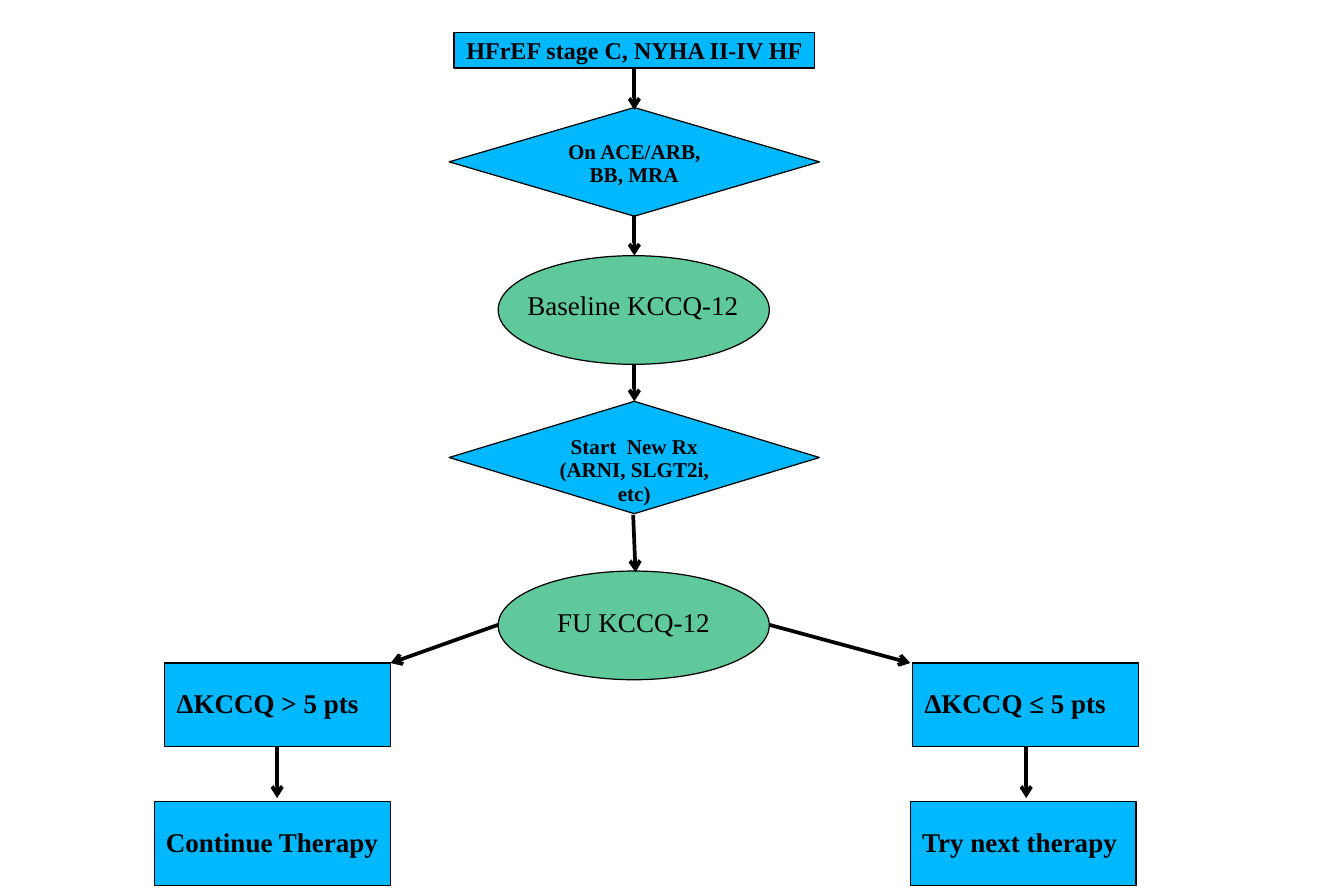
from lxml import etree
from pptx import Presentation
from pptx import util as u
from pptx.dml.color import RGBColor
from pptx.enum import shapes, text
from pptx.oxml import ns

BLUE, GREEN, BLACK = "00B8FF", "60C99C", "000000"
CENTER_X = 5.31


def color(hex_string):
    """Turn a hex string into a colour."""
    return RGBColor.from_string(hex_string)


def write(shape, wording, size=16.3, bold=True, align=text.PP_ALIGN.LEFT,
          anchor=text.MSO_ANCHOR.TOP, left=0.1, right=0.05):
    """Write one formatted paragraph into a shape."""
    frame = shape.text_frame
    frame.word_wrap = True
    frame.vertical_anchor = anchor
    frame.margin_left, frame.margin_right = u.Inches(left), u.Inches(right)
    frame.margin_top = frame.margin_bottom = u.Inches(0.05)
    paragraph = frame.paragraphs[0]
    paragraph.alignment = align
    paragraph.line_spacing = 0.93
    run = paragraph.add_run()
    run.text = wording
    run.font.name = "Times New Roman"
    run.font.size = u.Pt(size)
    run.font.bold = bold
    run.font.color.rgb = color(BLACK)


def add_node(slide, kind, box, fill):
    """Add an outlined preset shape in the given box."""
    shape = slide.shapes.add_shape(kind, *map(u.Inches, box))
    shape.shadow.inherit = False
    shape.fill.solid()
    shape.fill.fore_color.rgb = color(fill)
    shape.line.color.rgb = color(BLACK)
    shape.line.width = u.Pt(0.75)
    return shape


def add_arrow(slide, start, end):
    """Add an arrow between two points."""
    arrow = slide.shapes.add_connector(
        shapes.MSO_CONNECTOR.STRAIGHT, *map(u.Inches, (*start, *end)))
    arrow.line.color.rgb = color(BLACK)
    arrow.line.width = u.Pt(2.25)
    etree.SubElement(arrow.line._get_or_add_ln(), ns.qn("a:tailEnd"), type="arrow")
    etree.SubElement(arrow._element.spPr, ns.qn("a:effectLst"))


def add_header(slide, box, wording):
    """Add the patient group at the top of the flow."""
    header = add_node(slide, shapes.MSO_SHAPE.RECTANGLE, box, BLUE)
    write(header, wording, size=14.5, align=text.PP_ALIGN.CENTER, left=0.05)


def add_decision(slide, box, wording):
    """Add a treatment diamond."""
    diamond = add_node(slide, shapes.MSO_SHAPE.FLOWCHART_DECISION, box, BLUE)
    write(diamond, wording, size=12.7, align=text.PP_ALIGN.CENTER, left=0.12, right=0.12)


def add_survey(slide, box, wording, label_width, label_offset):
    """Add a survey ellipse with its label centred across it."""
    left, top, width, height = box
    add_node(slide, shapes.MSO_SHAPE.OVAL, box, GREEN)
    label = slide.shapes.add_textbox(
        u.Inches(left + (width - label_width) / 2), u.Inches(top + label_offset),
        u.Inches(label_width), u.Inches(0.36))
    write(label, wording, bold=False)


def add_branch(slide, result_box, action_box, arrow_x, result, action):
    """Add a survey result, the action it leads to and the arrow between."""
    for box, wording in ((result_box, result), (action_box, action)):
        shape = add_node(slide, shapes.MSO_SHAPE.RECTANGLE, box, BLUE)
        write(shape, wording, anchor=text.MSO_ANCHOR.MIDDLE)
    bottom = result_box[1] + result_box[3]
    add_arrow(slide, (arrow_x, bottom), (arrow_x, action_box[1] - 0.03))


def main():
    """Build the therapy flowchart."""
    presentation = Presentation()
    presentation.slide_width = u.Inches(11.25)
    presentation.slide_height = u.Inches(7.5)
    slide = presentation.slides.add_slide(presentation.slide_layouts[6])

    add_header(slide, (3.8, 0.27, 3.02, 0.3), "HFrEF stage C, NYHA II-IV HF")
    add_decision(slide, (3.76, 0.9, 3.1, 0.91), "On ACE/ARB, BB, MRA")
    add_survey(slide, (4.17, 2.14, 2.27, 0.91), "Baseline KCCQ-12", 1.98, 0.25)
    add_decision(slide, (3.76, 3.36, 3.1, 0.94), "Start  New Rx (ARNI, SLGT2i, etc)")
    add_survey(slide, (4.17, 4.78, 2.27, 0.91), "FU KCCQ-12", 1.48, 0.26)

    for top, bottom in ((0.57, 0.92), (1.8, 2.14), (3.05, 3.36)):
        add_arrow(slide, (CENTER_X, top), (CENTER_X, bottom))
    add_arrow(slide, (5.3, 4.31), (5.32, 4.79))
    add_arrow(slide, (4.17, 5.23), (3.27, 5.55))
    add_arrow(slide, (6.44, 5.23), (7.62, 5.55))

    add_branch(slide, (1.38, 5.55, 1.89, 0.7), (1.29, 6.71, 1.98, 0.7), 2.32,
               "ΔKCCQ > 5 pts", "Continue Therapy")
    add_branch(slide, (7.64, 5.55, 1.89, 0.7), (7.62, 6.71, 1.89, 0.7), 8.59,
               "ΔKCCQ ≤ 5 pts", "Try next therapy")
    presentation.save("out.pptx")


if __name__ == "__main__":
    main()
